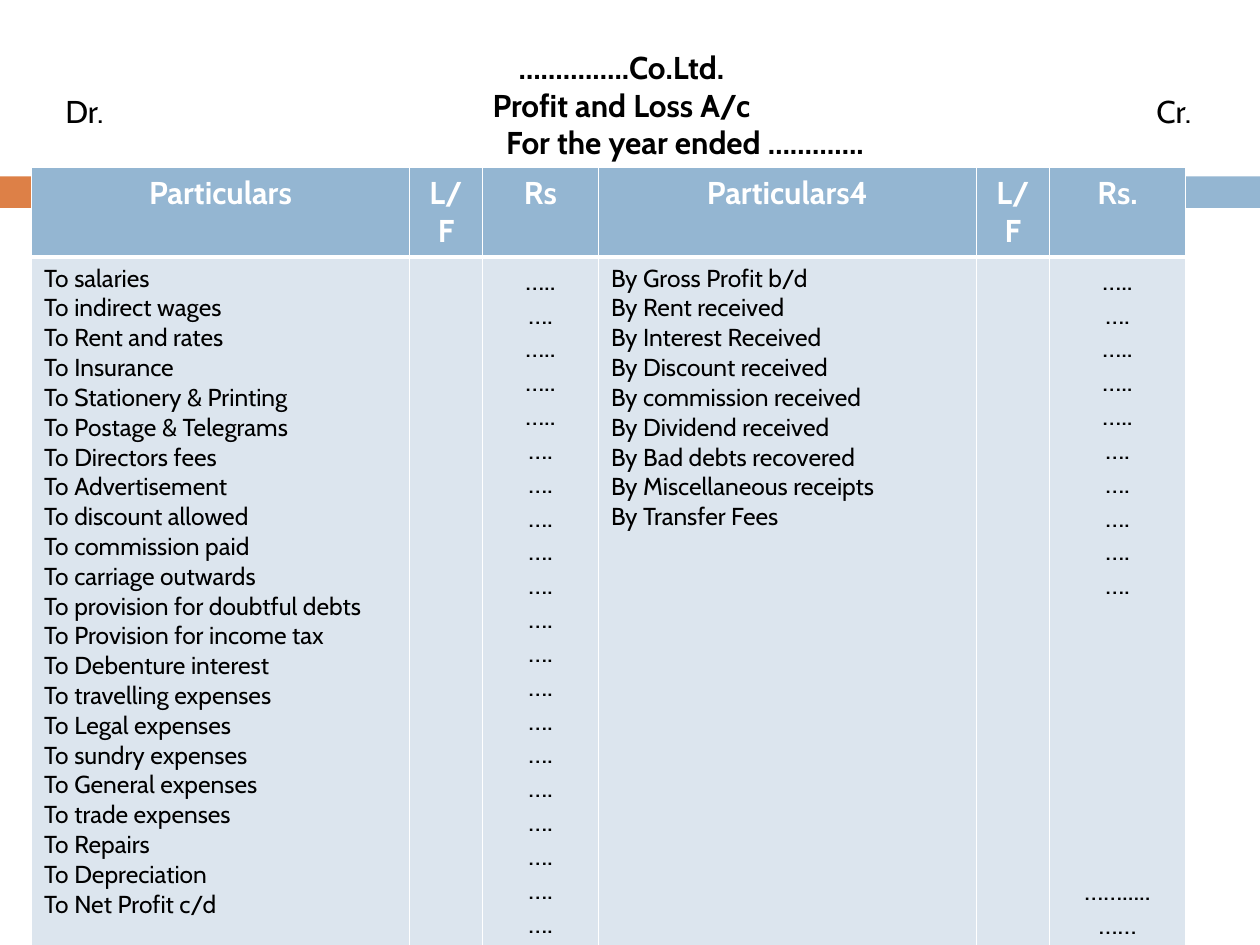
import pptx
import pptx.dml.color
import pptx.enum.shapes
import pptx.enum.text
import pptx.oxml
import pptx.oxml.ns
import pptx.util

Pt = pptx.util.Pt
RGBColor = pptx.dml.color.RGBColor
ALIGN = pptx.enum.text.PP_ALIGN

FONT = "Cabin"
ORANGE = RGBColor(0xDD, 0x80, 0x47)
BLUE = RGBColor(0x94, 0xB6, 0xD2)
PALE_BLUE = RGBColor(0xDC, 0xE5, 0xEE)
WHITE = RGBColor(0xFF, 0xFF, 0xFF)
BLACK = RGBColor(0, 0, 0)

TITLE = ["……….…..Co.Ltd. ", "Profit and Loss A/c ", "For the year ended …………. "]
TITLE_INDENT = 72.6  # moves the last title line to the right

BANDS = [(0, 41.76, ORANGE), (46.8, 673.2, BLUE)]  # left, width, colour
SIDES = [("Dr.", 30.24, 48.24), ("Cr.", 653.76, 36)]  # text, left, width

COLUMN_WIDTHS = [216, 41.76, 66.24, 216, 41.76, 77.76]
ROW_HEIGHTS = [28.08, 424.08]
HEADINGS = ["Particulars", "L/F", "Rs", "Particulars4", "L/F", "Rs."]
DEBITS = [
    "To salaries", "To indirect wages", "To Rent and rates", "To Insurance",
    "To Stationery & Printing", "To Postage & Telegrams", "To Directors fees",
    "To Advertisement", "To discount allowed", "To commission paid",
    "To carriage outwards", "To provision for doubtful debts",
    "To Provision for income tax", "To Debenture interest",
    "To travelling expenses", "To Legal expenses", "To sundry expenses",
    "To General expenses", "To trade expenses", "To Repairs",
    "To Depreciation", "To Net Profit c/d",
]
CREDITS = [
    "By Gross Profit b/d", "By Rent received", "By Interest Received",
    "By Discount received", "By commission received", "By Dividend received",
    "By Bad debts recovered", "By Miscellaneous receipts", "By Transfer Fees",
]
FIRST_AMOUNTS = ["…..", "….", "…..", "…..", "…..", "….", "….", "….", "….", "…."]
DEBIT_AMOUNTS = FIRST_AMOUNTS + ["…."] * 11
TOTALS = ["…….....", "……"]
TOTALS_GAP = 155.4  # eight empty lines above the totals
ENTRIES = [DEBITS, [], DEBIT_AMOUNTS, CREDITS, [], FIRST_AMOUNTS + TOTALS]
AMOUNT_COLUMNS = (2, 5)


def write(frame, lines, size, color=BLACK, bold=False, align=ALIGN.LEFT):
    frame.text = "\n".join(lines)
    for para in frame.paragraphs:
        para.alignment = align
        para.font.size = Pt(size)
        for span in para.runs:
            span.font.name = FONT
            span.font.size = Pt(size)
            span.font.bold = bold
            span.font.color.rgb = color


def add_label(page, lines, left, top, width, height, **style):
    box = page.shapes.add_textbox(Pt(left), Pt(top), Pt(width), Pt(height))
    frame = box.text_frame
    frame.word_wrap = True
    frame.auto_size = pptx.enum.text.MSO_AUTO_SIZE.SHAPE_TO_FIT_TEXT
    write(frame, lines, 18, **style)
    return frame


def set_borders(cell, bottom):
    """Draw white cell borders, 1 pt except for the given bottom width."""
    properties = cell._tc.get_or_add_tcPr()
    widths = {"lnL": 1, "lnR": 1, "lnT": 1, "lnB": bottom}
    for position, (edge, width) in enumerate(widths.items()):
        line = pptx.oxml.parse_xml(
            f'<a:{edge} {pptx.oxml.ns.nsdecls("a")} w="{Pt(width)}">'
            f'<a:solidFill><a:srgbClr val="{WHITE}"/></a:solidFill></a:{edge}>')
        properties.insert(position, line)


def add_account(page):
    table = page.shapes.add_table(
        2, len(HEADINGS), Pt(18), Pt(95.76),
        Pt(sum(COLUMN_WIDTHS)), Pt(sum(ROW_HEIGHTS))).table
    for row, height in zip(table.rows, ROW_HEIGHTS):
        row.height = Pt(height)
    for index, width in enumerate(COLUMN_WIDTHS):
        table.columns[index].width = Pt(width)
        heading, body = table.cell(0, index), table.cell(1, index)
        for cell, color, bottom in ((heading, BLUE, 3), (body, PALE_BLUE, 1)):
            cell.fill.solid()
            cell.fill.fore_color.rgb = color
            set_borders(cell, bottom)
        write(heading.text_frame, [HEADINGS[index]], 18, WHITE, True, ALIGN.CENTER)
        if index in AMOUNT_COLUMNS:
            write(body.text_frame, ENTRIES[index], 16, align=ALIGN.CENTER)
        else:
            write(body.text_frame, ENTRIES[index], 14)
    totals = table.cell(1, 5).text_frame.paragraphs[len(FIRST_AMOUNTS)]
    totals.space_before = Pt(TOTALS_GAP)


def main():
    deck = pptx.Presentation()
    deck.slide_width, deck.slide_height = Pt(720), Pt(540)
    page = deck.slides.add_slide(deck.slide_layouts[6])

    for left, width, color in BANDS:
        band = page.shapes.add_shape(
            pptx.enum.shapes.MSO_SHAPE.RECTANGLE, Pt(left), Pt(100.8), Pt(width), Pt(18))
        band.shadow.inherit = False
        band.fill.solid()
        band.fill.fore_color.rgb = color
        band.line.fill.background()

    add_account(page)

    title = add_label(page, TITLE, 180, 23.76, 354.24, 72.72, bold=True, align=ALIGN.CENTER)
    title.paragraphs[-1]._p.get_or_add_pPr().set("marL", str(Pt(TITLE_INDENT)))
    for text, left, width in SIDES:
        add_label(page, [text], left, 48.96, width, 28.8)

    deck.save("out.pptx")


if __name__ == "__main__":
    main()
